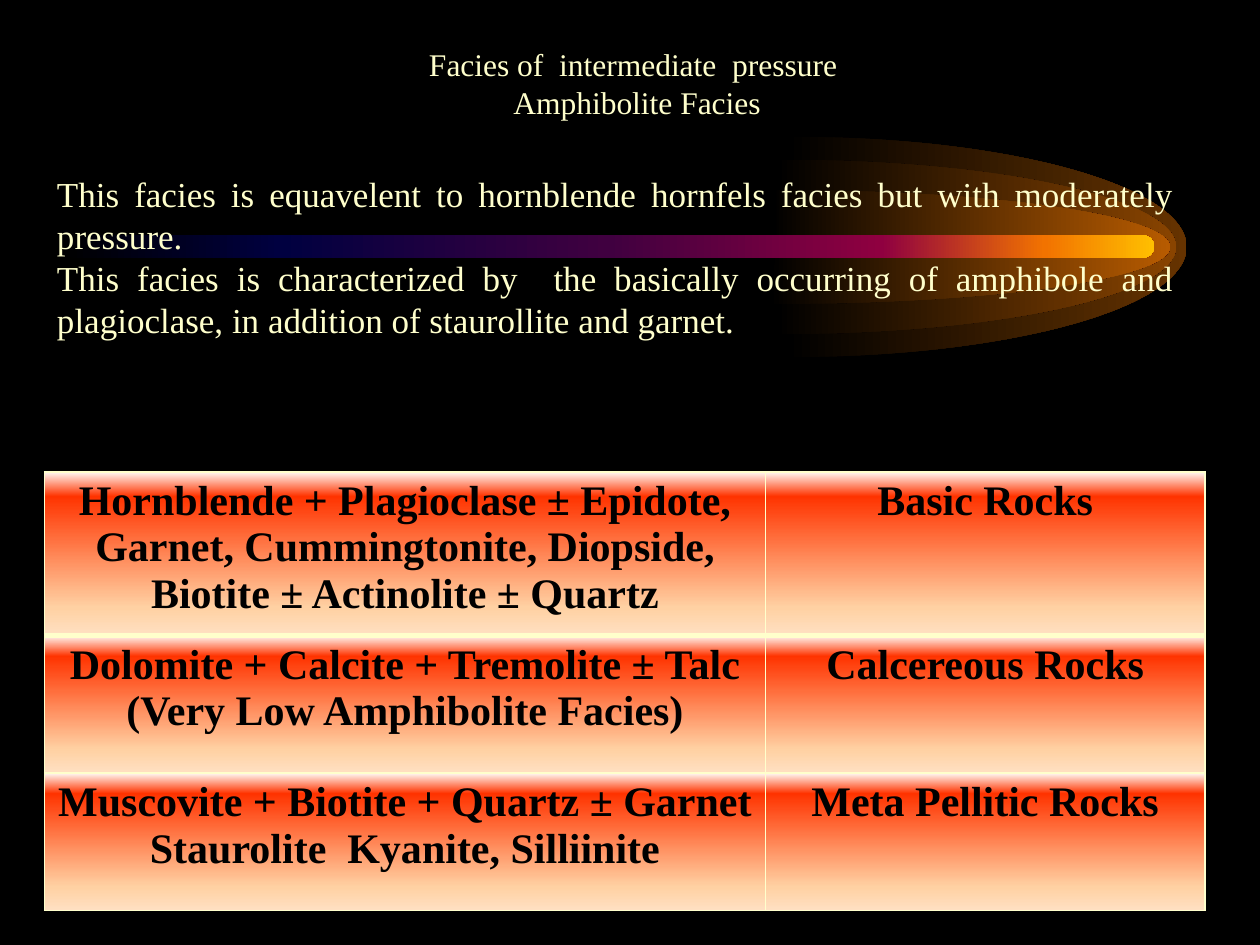
import pptx
import pptx.dml.color
import pptx.enum.shapes
import pptx.enum.text
import pptx.oxml
import pptx.oxml.ns
import pptx.util
from pptx.util import Cm

# Content
TITLE = ["Facies of  intermediate  pressure ", "Amphibolite Facies"]
DESCRIPTION = [
    "This facies is equavelent to hornblende hornfels facies but with moderately pressure.",
    "This facies is characterized by  the basically occurring of amphibole and plagioclase, "
    "in addition of staurollite and garnet.",
]
ASSEMBLAGES = [
    ("Hornblende + Plagioclase ± Epidote, Garnet, Cummingtonite, Diopside, "
     "Biotite ± Actinolite ± Quartz", "Basic Rocks"),
    ("Dolomite + Calcite + Tremolite ± Talc (Very Low Amphibolite Facies)", "Calcereous Rocks"),
    ("Muscovite + Biotite + Quartz ± Garnet Staurolite  Kyanite, Silliinite",
     "Meta Pellitic Rocks"),
]

# Look: lengths in cm, gradient stops as (percent, colour)
FONT = "Times New Roman"
CREAM, BLACK = "FFFFCC", "000000"
COMET_Y = 4.98
HALO_RADIUS_X, HALO_OVERHANG = 7.94, 0.13
HALOS = [  # centre x, vertical radius, outer colour
    (15.98, 2.22, "663300"),
    (15.77, 1.76, "894400"),
    (15.65, 1.15, "B75B00"),
]
ARC_HANDLE = 0.55  # Bézier handle length of a quarter ellipse, per radius
TAIL_STOPS = [(0, BLACK), (20, "000040"), (50, "400040"),
              (75, "8F0040"), (90, "F27300"), (100, "FFBF00")]
CELL_STOPS = [(0, "FFFAF5"), (15, "FF3300"), (83, "FFD1A3"), (100, "FFE0C2")]
COLUMN_WIDTHS = [14.53, 8.86]
ROW_HEIGHTS = [3.3, 2.77, 2.77]

PP_ALIGN = pptx.enum.text.PP_ALIGN


def rgb(hex_colour):
    return pptx.dml.color.RGBColor.from_string(hex_colour)


def drawing_xml(tag, attributes="", inner=""):
    return pptx.oxml.parse_xml(
        f'<a:{tag} {pptx.oxml.ns.nsdecls("a")} {attributes}>{inner}</a:{tag}>')


def set_gradient(fill, element, stops, angle):
    fill.gradient()
    fill.gradient_angle = angle
    stop_list = element.xpath(".//a:gsLst")[0]
    for stop in list(stop_list):
        stop_list.remove(stop)
    for percent, colour in stops:
        stop_list.append(drawing_xml("gs", f'pos="{percent * 1000}"',
                                     f'<a:srgbClr val="{colour}"/>'))


def style_comet_part(part, stops):
    part.shadow.inherit = False
    part.line.fill.background()
    set_gradient(part.fill, part._element, stops, 0)


def add_halo(slide, centre_x, radius_y, colour):
    """Half ellipse: a freeform whose first two sides are bent into quarter arcs."""
    top, bottom = COMET_Y - radius_y, COMET_Y + radius_y
    right, left = centre_x + HALO_RADIUS_X, centre_x - HALO_OVERHANG
    builder = slide.shapes.build_freeform(Cm(centre_x), Cm(top))
    builder.add_line_segments([(Cm(right), Cm(COMET_Y)), (Cm(left), Cm(bottom)),
                               (Cm(centre_x), Cm(COMET_Y))], close=True)
    halo = builder.convert_to_shape()
    reach_x, reach_y = HALO_RADIUS_X * ARC_HANDLE, radius_y * ARC_HANDLE
    arcs = [
        [(centre_x + reach_x, top), (right, COMET_Y - reach_y), (right, COMET_Y)],
        [(right, COMET_Y + reach_y), (centre_x + reach_x, bottom), (left, bottom)],
    ]
    for side, arc in zip(halo._element.xpath(".//a:lnTo"), arcs):
        points = "".join(f'<a:pt x="{Cm(x - left)}" y="{Cm(y - top)}"/>' for x, y in arc)
        side.getparent().replace(side, drawing_xml("cubicBezTo", inner=points))
    style_comet_part(halo, [(0, BLACK), (100, colour)])


def format_text(frame, size, colour, align, bold=False, spacing=None):
    for paragraph in frame.paragraphs:
        paragraph.alignment = align
        paragraph.line_spacing = spacing
        for run in paragraph.runs:
            run.font.name = FONT
            run.font.size = pptx.util.Pt(size)
            run.font.bold = bold
            run.font.color.rgb = rgb(colour)


def add_text(slide, lines, box, size, align, spacing):
    frame = slide.shapes.add_textbox(*map(Cm, box)).text_frame
    frame.word_wrap = True
    frame.auto_size = pptx.enum.text.MSO_AUTO_SIZE.SHAPE_TO_FIT_TEXT
    frame.text = "\n".join(lines)
    format_text(frame, size, CREAM, align, spacing=pptx.util.Pt(spacing))


def set_borders(cell, widths):
    properties = cell._tc.get_or_add_tcPr()
    for index, (side, points) in enumerate(widths.items()):
        properties.insert(index, drawing_xml(
            f"ln{side}", f'w="{pptx.util.Pt(points)}"',
            f'<a:solidFill><a:srgbClr val="{CREAM}"/></a:solidFill>'))


def main():
    deck = pptx.Presentation()
    deck.slide_width, deck.slide_height = Cm(25.4), Cm(19.05)
    slide = deck.slides.add_slide(deck.slide_layouts[6])
    slide.background.fill.solid()
    slide.background.fill.fore_color.rgb = rgb(BLACK)

    # Comet: halos, then the tail
    for halo in HALOS:
        add_halo(slide, *halo)
    tail = slide.shapes.add_shape(pptx.enum.shapes.MSO_SHAPE.ROUNDED_RECTANGLE,
                                  Cm(1.27), Cm(4.74), Cm(22), Cm(0.46))
    tail.adjustments[0] = 0.5
    style_comet_part(tail, TAIL_STOPS)

    # Title and description
    add_text(slide, TITLE, (2.34, 0.77, 21.01, 1.8), 18, PP_ALIGN.CENTER, 21.7)
    add_text(slide, DESCRIPTION, (0.9, 3.35, 23.01, 3.68), 20, PP_ALIGN.JUSTIFY, 24)

    # Table of mineral assemblages by rock type
    table = slide.shapes.add_table(
        len(ASSEMBLAGES), len(COLUMN_WIDTHS), Cm(0.9), Cm(9.51),
        Cm(sum(COLUMN_WIDTHS)), Cm(sum(ROW_HEIGHTS))).table
    table.first_row = table.horz_banding = False
    for column, width in zip(table.columns, COLUMN_WIDTHS):
        column.width = Cm(width)
    for r, (row, height) in enumerate(zip(table.rows, ROW_HEIGHTS)):
        row.height = Cm(height)
        for cell, text in zip(row.cells, ASSEMBLAGES[r]):
            cell.text_frame.text = text
            format_text(cell.text_frame, 24, BLACK, PP_ALIGN.CENTER, bold=True)
            set_gradient(cell.fill, cell._tc, CELL_STOPS, 270)
            set_borders(cell, {"L": 1, "R": 1, "T": 3 if r == 1 else 1,
                               "B": 3 if r == 0 else 1})

    deck.save("out.pptx")


if __name__ == "__main__":
    main()
